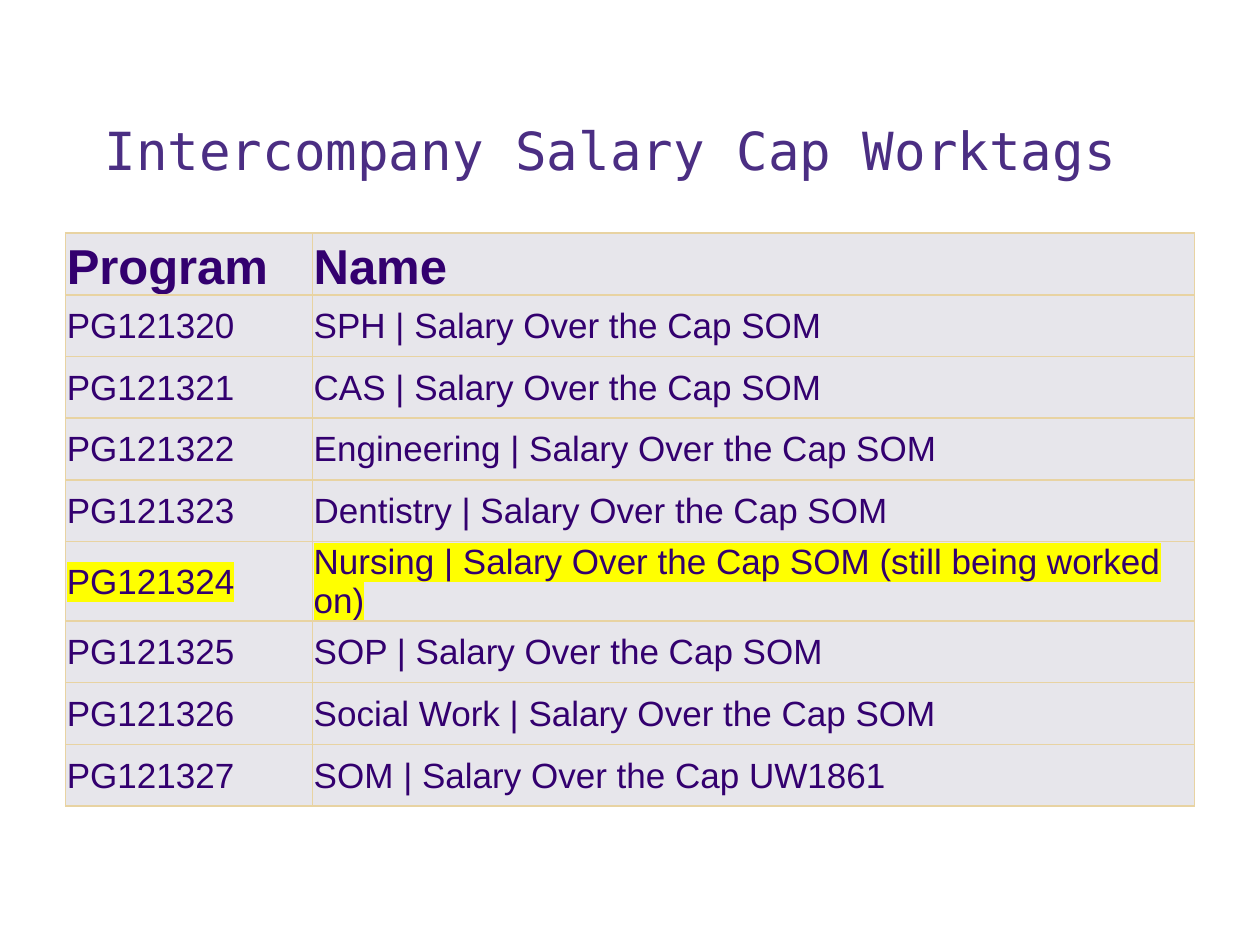
from lxml.etree import SubElement
from pptx import Presentation
from pptx.dml.color import RGBColor
from pptx.enum.text import MSO_ANCHOR, MSO_AUTO_SIZE, PP_ALIGN
from pptx.oxml.ns import qn
from pptx.util import Inches, Pt

HUES = {
    "title": "4B2E83",
    "text": "33006F",
    "cell": "E7E6EB",
    "edge": "E8D3A2",
    "mark": "FFFF00",
}
HEAD = ("Program", "Name")
UNITS = ("SPH", "CAS", "Engineering", "Dentistry", "Nursing", "SOP", "Social Work", "SOM")
TAILS = {"Nursing": "SOM (still being worked on)", "SOM": "UW1861"}
FIRST = 121320
COLS = (1.96, 7)
ROW = 0.49


def add_hue(node, tag, hue):
    part = SubElement(node, qn(tag))
    SubElement(part, qn("a:srgbClr"), val=HUES[hue])


def put_text(frame, text, size=20, font="Arial", hue="text", bold=False,
             mark=False, anchor=MSO_ANCHOR.MIDDLE, space=None):
    frame.vertical_anchor = anchor
    para = frame.paragraphs[0]
    para.alignment = PP_ALIGN.LEFT
    para.line_spacing = space
    run = para.add_run()
    run.text = text
    if mark:
        add_hue(run._r.get_or_add_rPr(), "a:highlight", "mark")
    run.font.size = Pt(size)
    run.font.name = font
    run.font.bold = bold
    run.font.color.rgb = RGBColor.from_string(HUES[hue])


def style_cell(cell):
    cell.margin_left = cell.margin_right = cell.margin_top = Inches(0.01)
    cell.margin_bottom = 0
    props = cell._tc.get_or_add_tcPr()
    for side in ("L", "R", "T", "B"):
        line = SubElement(props, qn(f"a:ln{side}"), w=str(Pt(1)))
        add_hue(line, "a:solidFill", "edge")
    cell.fill.solid()
    cell.fill.fore_color.rgb = RGBColor.from_string(HUES["cell"])


def draw_title(slide, box):
    title = slide.shapes.title
    title.left, title.top, title.width, title.height = map(Inches, box)
    frame = title.text_frame
    frame.word_wrap = True
    frame.auto_size = MSO_AUTO_SIZE.NONE
    put_text(frame, "Intercompany Salary Cap Worktags", size=30,
             font="DejaVu Sans Mono", hue="title", anchor=MSO_ANCHOR.BOTTOM, space=0.9)


def draw_table(slide, left, top):
    rows = [HEAD]
    for step, unit in enumerate(UNITS):
        tail = TAILS.get(unit, "SOM")
        rows.append((f"PG{FIRST + step}", f"{unit} | Salary Over the Cap {tail}"))
    box = map(Inches, (left, top, sum(COLS), ROW * len(rows)))
    table = slide.shapes.add_table(len(rows), len(COLS), *box).table
    table.first_row = table.horz_banding = False
    for col, width in zip(table.columns, COLS):
        col.width = Inches(width)
    for row, texts in enumerate(rows):
        table.rows[row].height = Inches(ROW)
        look = {"mark": texts[1].startswith("Nursing")}
        if row == 0:
            look = {"size": 28, "bold": True, "anchor": MSO_ANCHOR.BOTTOM}
        for col, text in enumerate(texts):
            cell = table.cell(row, col)
            style_cell(cell)
            put_text(cell.text_frame, text, **look)
            cell.vertical_anchor = look.get("anchor", MSO_ANCHOR.MIDDLE)


def main():
    deck = Presentation()
    deck.slide_width, deck.slide_height = Inches(10), Inches(7.5)
    slide = deck.slides.add_slide(deck.slide_layouts[5])
    draw_title(slide, (0.73, 0.41, 8.95, 1.08))
    draw_table(slide, 0.52, 1.85)
    deck.save("out.pptx")


if __name__ == "__main__":
    main()
